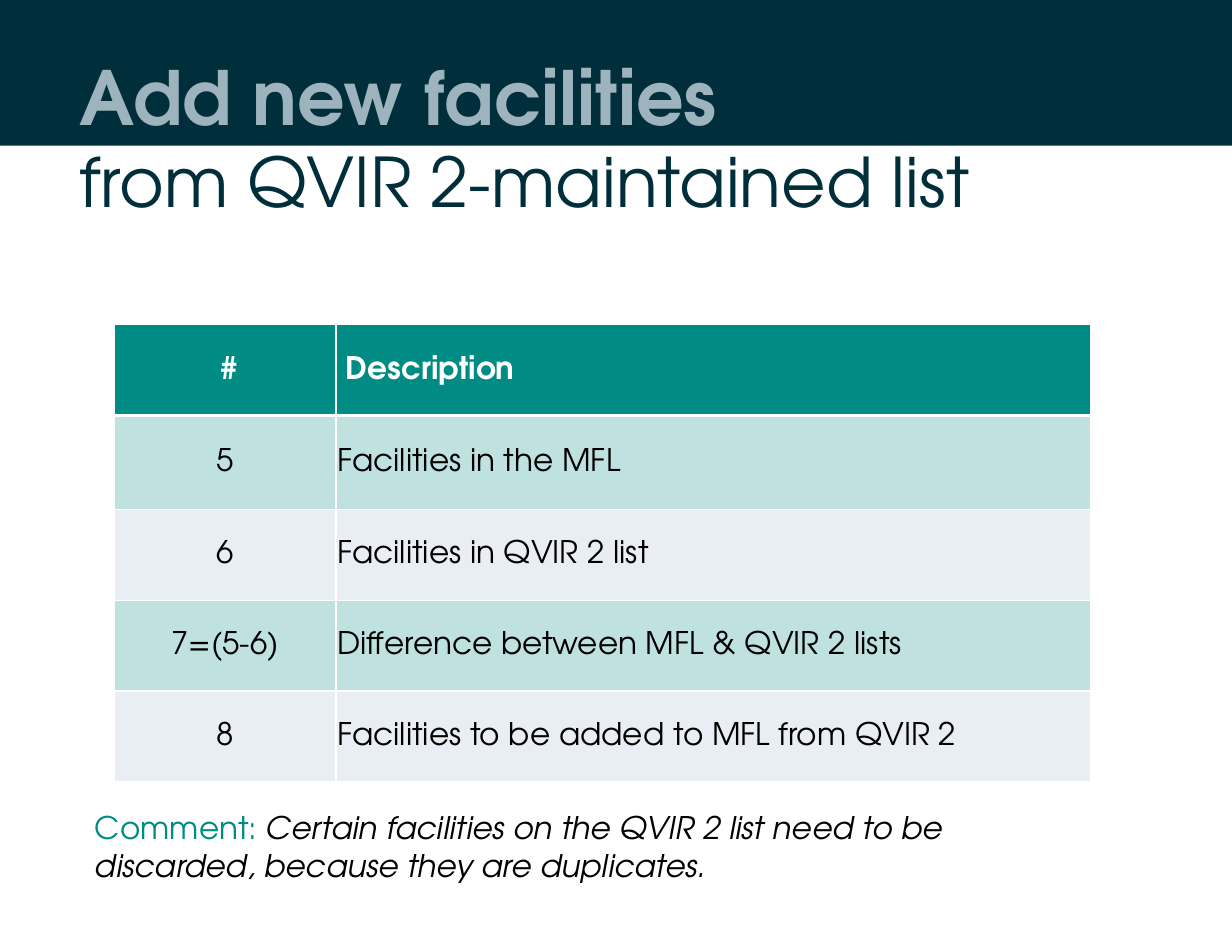
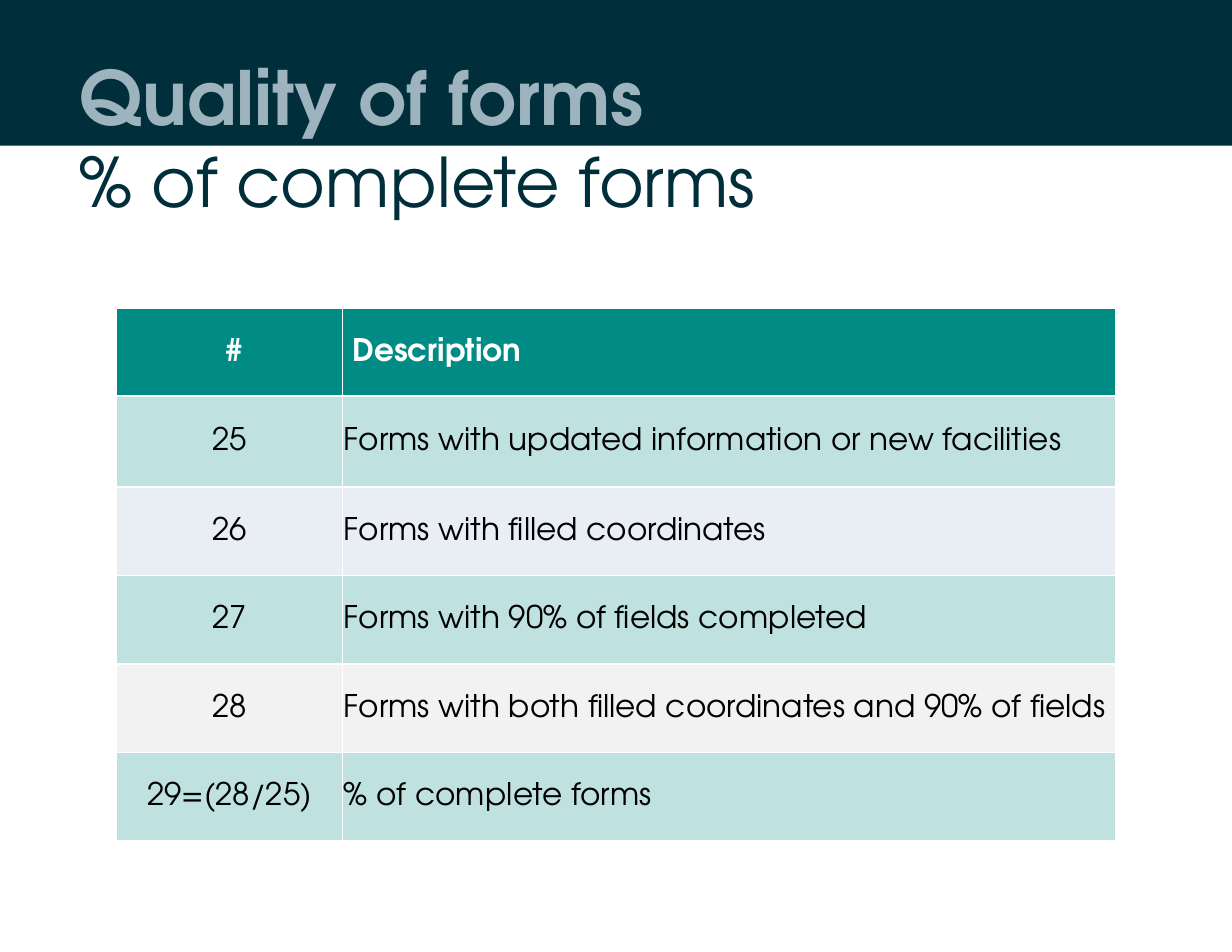
from pptx import Presentation
from pptx.dml.color import RGBColor
from pptx.enum.shapes import MSO_SHAPE as Shape
from pptx.enum.text import MSO_ANCHOR as Anchor, PP_ALIGN as Align
from pptx.oxml import parse_xml
from pptx.oxml.ns import nsdecls
from pptx.util import Inches, Pt

FONT = "TeX Gyre Adventor"
NAVY, MIST, TEAL = "002E3A", "9DB4BE", "008C84"
MINT, PALE, GREY = "BFE2E0", "E9EDF4", "F2F2F2"
WHITE, BLACK = "FFFFFF", "000000"


def color(code):
    return RGBColor.from_string(code)


def assign(item, values):
    for name, value in values.items():
        setattr(item, name, value)


class Deck:
    """Holds the shared style and the current slide."""

    def __init__(self):
        self.file = Presentation()
        assign(self.file, {"slide_width": Inches(11), "slide_height": Inches(8.5)})

    def page(self, title, detail):
        self.slide = self.file.slides.add_slide(self.file.slide_layouts[5])
        self.band()
        self.title(title)
        self.text((0.61, 1.19, 8.8, 0.92), [(detail, 44, NAVY, {})])

    def band(self):
        band = self.slide.shapes.add_shape(Shape.RECTANGLE, 0, 0, Inches(11), Inches(1.3))
        band.shadow.inherit = False
        band.fill.solid()
        band.fill.fore_color.rgb = color(NAVY)
        band.line.fill.background()
        # Keep the band behind the title
        self.slide.shapes._spTree.insert(2, band._element)

    def title(self, words):
        box = self.slide.shapes.title
        sides = zip(("left", "top", "width", "height"), (0.61, 0.4, 9.54, 1.25))
        assign(box, {side: Inches(size) for side, size in sides})
        self.fill(box.text_frame, [(words, 48, MIST, {"bold": True})])

    def text(self, place, runs):
        box = self.slide.shapes.add_textbox(*map(Inches, place))
        self.fill(box.text_frame, runs)

    def fill(self, frame, runs, align=Align.LEFT, anchor=Anchor.TOP):
        assign(frame, {"word_wrap": True, "vertical_anchor": anchor})
        para = frame.paragraphs[0]
        para.alignment = align
        for words, size, shade, look in runs:
            run = para.add_run()
            run.text = words
            assign(run.font, {"name": FONT, "size": Pt(size), **look})
            run.font.color.rgb = color(shade)

    def table(self, left, top, widths, heights, rows, fills):
        place = map(Inches, (left, top, sum(widths), sum(heights)))
        grid = self.slide.shapes.add_table(len(rows), len(widths), *place).table
        for col, width in zip(grid.columns, widths):
            col.width = Inches(width)
        for row, height in zip(grid.rows, heights):
            row.height = Inches(height)
        for r, (row, shade) in enumerate(zip(rows, fills)):
            for c, words in enumerate(row):
                self.cell(grid.cell(r, c), words, shade, r, c)

    def cell(self, cell, words, shade, r, c):
        head = r == 0
        edge = Inches(0.01)
        assign(cell, {"margin_left": edge, "margin_right": edge, "margin_top": edge,
                      "margin_bottom": 0, "vertical_anchor": Anchor.MIDDLE})
        cell.fill.solid()
        cell.fill.fore_color.rgb = color(shade)
        runs = [(words, 20, WHITE if head else BLACK, {"bold": head})]
        self.fill(cell.text_frame, runs, Align.LEFT if c else Align.CENTER, None)
        # The rule under the header is heavier
        wide = {"T": 1.5 if r == 1 else 1, "B": 1.5 if head else 1}
        props = cell._tc.get_or_add_tcPr()
        for spot, side in enumerate("LRTB"):
            props.insert(spot, parse_xml(
                f'<a:ln{side} {nsdecls("a")} w="{Pt(wide.get(side, 1))}"><a:solidFill>'
                f'<a:srgbClr val="{WHITE}"/></a:solidFill></a:ln{side}>'))


def main():
    deck = Deck()
    head = (" #", " Description")

    # New facilities
    deck.page("Add new facilities", "from QVIR 2-maintained list")
    deck.text((0.75, 7.17, 8.8, 0.92), [
        ("Comment: ", 20, TEAL, {}),
        ("Certain facilities on the QVIR 2 list need to be discarded, "
         "because they are duplicates.", 20, BLACK, {"italic": True})])
    deck.table(1.02, 2.9, (1.98, 6.74), [0.81, 0.84] + [0.81] * 3, [
        head,
        ("5", "Facilities in the MFL"),
        ("6", "Facilities in QVIR 2 list"),
        ("7=(5-6)", "Difference between MFL & QVIR 2 lists"),
        ("8", "Facilities to be added to MFL from QVIR 2"),
    ], [TEAL] + [MINT, PALE] * 2)

    # Form quality
    deck.page("Quality of forms", "% of complete forms")
    deck.table(1.04, 2.75, (2.02, 6.9), [0.79, 0.81] + [0.79] * 4, [
        head,
        ("25", "Forms with updated information or new facilities"),
        ("26", "Forms with filled coordinates"),
        ("27", "Forms with 90% of fields completed"),
        ("28", "Forms with both filled coordinates and 90% of fields"),
        ("29=(28/25)", "% of complete forms"),
    ], [TEAL, MINT, PALE, MINT, GREY, MINT])

    deck.file.save("out.pptx")


if __name__ == "__main__":
    main()
